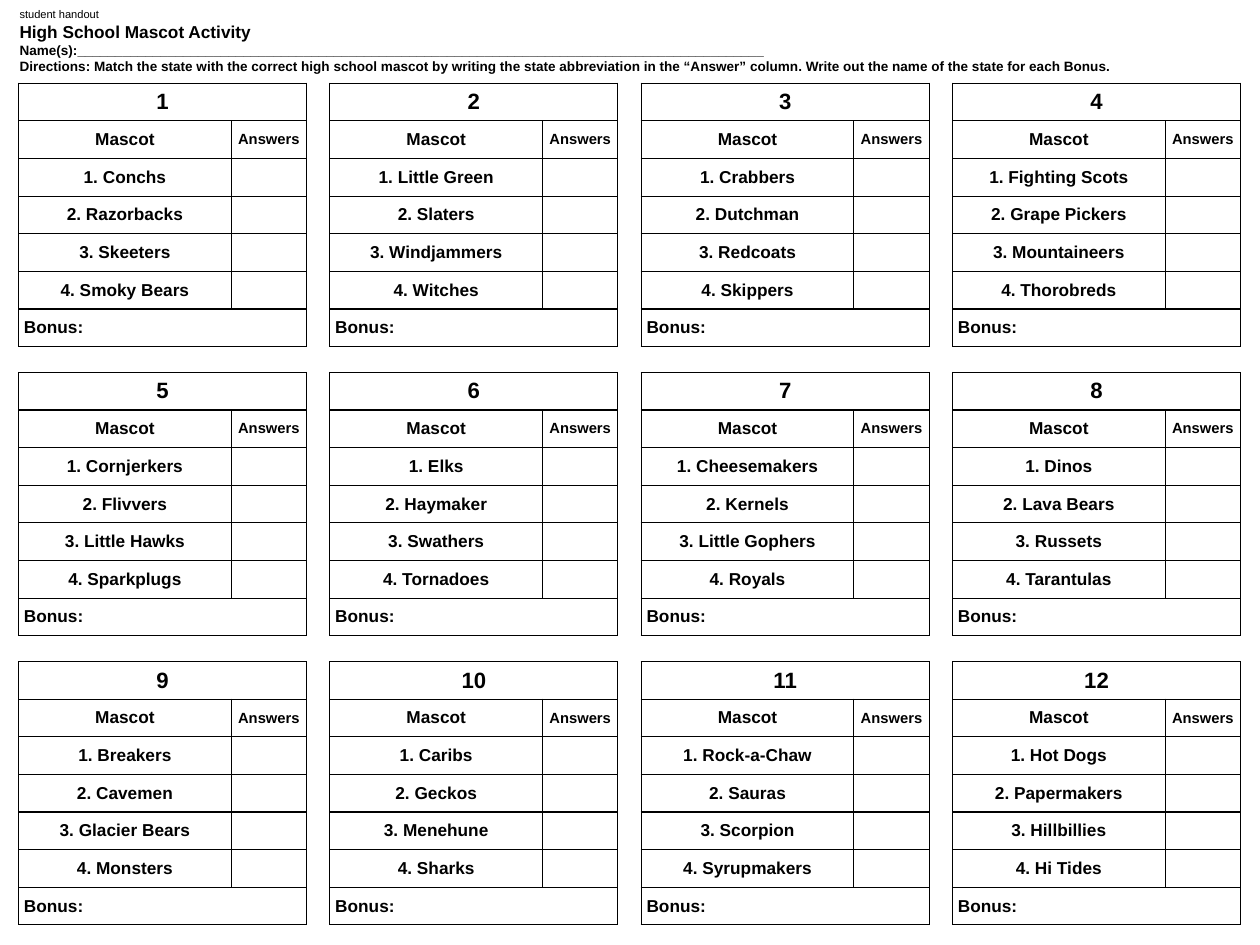
from lxml import etree
from pptx import Presentation
from pptx.dml.color import RGBColor
from pptx.enum.text import MSO_ANCHOR, PP_ALIGN
from pptx.oxml.ns import qn
from pptx.util import Inches, Pt

LEFT, CENTER = PP_ALIGN.LEFT, PP_ALIGN.CENTER
MIDDLE, BOTTOM = MSO_ANCHOR.MIDDLE, MSO_ANCHOR.BOTTOM

HEAD = [
    ("student handout", 9, False),
    ("High School Mascot Activity", 14, True),
    ("Name(s):" + "_" * 91, 11, True),
    ("Directions: Match the state with the correct high school mascot by writing "
     "the state abbreviation in the “Answer” column. Write out the name of the "
     "state for each Bonus.", 11, True),
]
GROUPS = [
    ("Conchs", "Razorbacks", "Skeeters", "Smoky Bears"),
    ("Little Green", "Slaters", "Windjammers", "Witches"),
    ("Crabbers", "Dutchman", "Redcoats", "Skippers"),
    ("Fighting Scots", "Grape Pickers", "Mountaineers", "Thorobreds"),
    ("Cornjerkers", "Flivvers", "Little Hawks", "Sparkplugs"),
    ("Elks", "Haymaker", "Swathers", "Tornadoes"),
    ("Cheesemakers", "Kernels", "Little Gophers", "Royals"),
    ("Dinos", "Lava Bears", "Russets", "Tarantulas"),
    ("Breakers", "Cavemen", "Glacier Bears", "Monsters"),
    ("Caribs", "Geckos", "Menehune", "Sharks"),
    ("Rock-a-Chaw", "Sauras", "Scorpion", "Syrupmakers"),
    ("Hot Dogs", "Papermakers", "Hillbillies", "Hi Tides"),
]
ACROSS = 4
X, Y = 0.21, 0.94
STEP_X = (10.75 - X) / 3
STEP_Y = (7.47 - Y) / 2
WIDTHS = (2.4, 0.85)
HEIGHT = 2.97
INSET = Inches(0.06)
BLACK = "000000"


def color(code):
    return RGBColor.from_string(code)


def style(para, size, bold=True, align=CENTER):
    para.alignment = align
    for run in para.runs:
        font = run.font
        font.name, font.size, font.bold = "Arial", Pt(size), bold
        font.color.rgb = color(BLACK)


def border(cell):
    props = cell._tc.get_or_add_tcPr()
    for place, side in enumerate(("lnL", "lnR", "lnT", "lnB")):
        line = etree.Element(qn("a:" + side), w=str(Pt(1)))
        fill = etree.SubElement(line, qn("a:solidFill"))
        etree.SubElement(fill, qn("a:srgbClr"), val=BLACK)
        props.insert(place, line)


def add_head(slide):
    title = slide.shapes.title
    title.left, title.top = Inches(0.22), Inches(0.15)
    title.width, title.height = Inches(13.78), Inches(0.69)
    frame = title.text_frame
    frame.margin_left = frame.margin_right = 0
    frame.margin_top = frame.margin_bottom = 0
    frame.vertical_anchor = BOTTOM
    frame.word_wrap = True
    frame.text = "\n".join(text for text, size, bold in HEAD)
    for para, (text, size, bold) in zip(frame.paragraphs, HEAD):
        style(para, size, bold, LEFT)


def add_group(slide, index, names):
    row, col = divmod(index, ACROSS)
    rows = [(str(index + 1), ""), ("Mascot", "Answers")]
    rows += [(f"{n}. {name}", "") for n, name in enumerate(names, 1)]
    rows += [("Bonus:", "")]
    last = len(rows) - 1
    table = slide.shapes.add_table(
        len(rows), len(WIDTHS),
        Inches(X + col * STEP_X), Inches(Y + row * STEP_Y),
        Inches(sum(WIDTHS)), Inches(HEIGHT)).table
    table.first_row = table.horz_banding = False
    for column, width in zip(table.columns, WIDTHS):
        column.width = Inches(width)
    for r in (0, last):
        table.cell(r, 0).merge(table.cell(r, 1))
    for r, texts in enumerate(rows):
        for c, text in enumerate(texts):
            cell = table.cell(r, c)
            cell.fill.background()
            border(cell)
            cell.margin_left = cell.margin_right = INSET
            cell.margin_top = cell.margin_bottom = INSET
            cell.vertical_anchor = MIDDLE
            cell.text_frame.text = text
            size = 18 if r == 0 else 12 if c else 14
            align = LEFT if r == last else CENTER
            style(cell.text_frame.paragraphs[0], size, align=align)


def main():
    deck = Presentation()
    deck.slide_width, deck.slide_height = Inches(14.22), Inches(10.67)
    slide = deck.slides.add_slide(deck.slide_layouts[5])
    add_head(slide)
    for index, names in enumerate(GROUPS):
        add_group(slide, index, names)
    deck.save("out.pptx")


if __name__ == "__main__":
    main()
